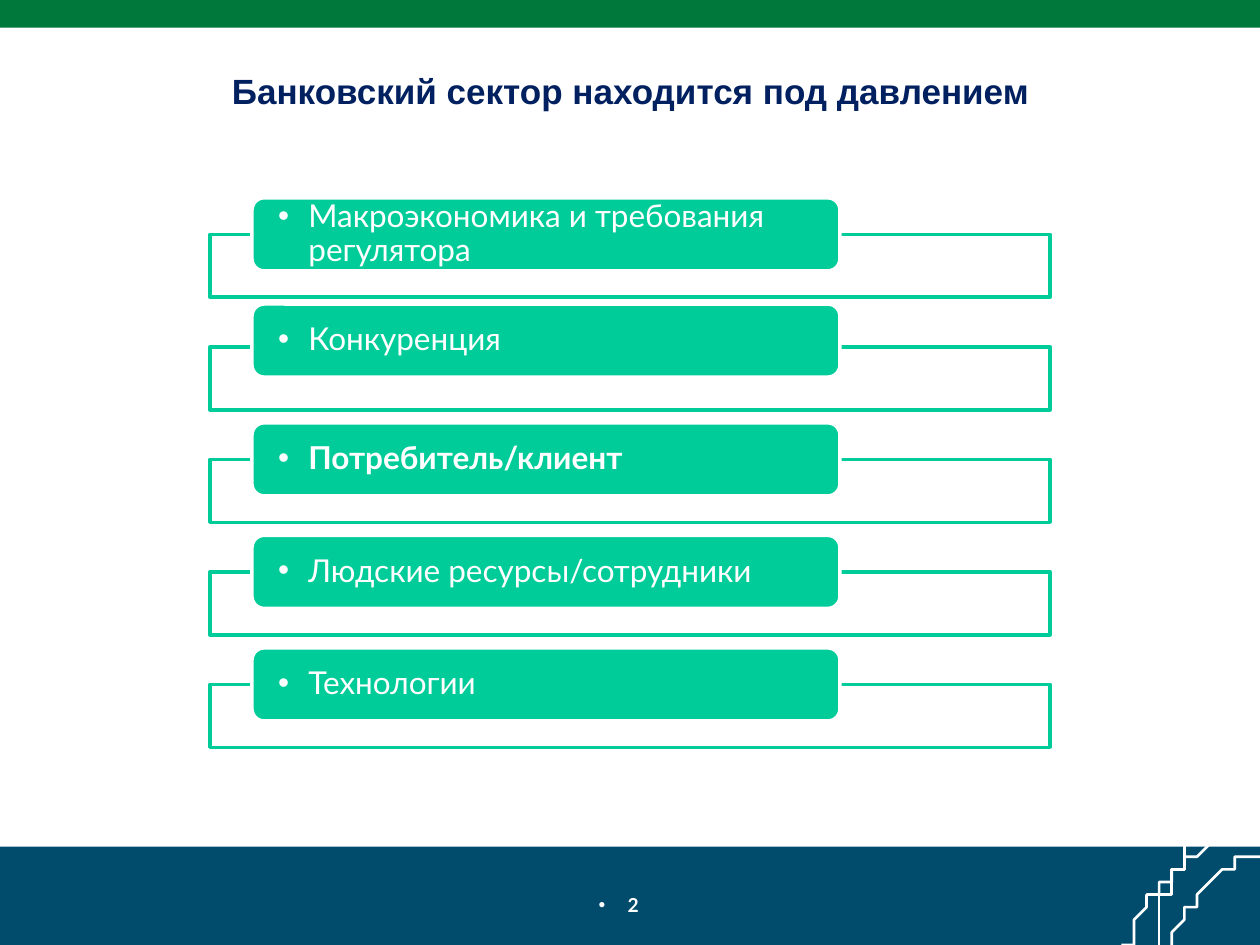
from dataclasses import dataclass

from lxml.etree import SubElement
from pptx import Presentation
from pptx.dml.color import RGBColor
from pptx.enum.shapes import MSO_SHAPE as Preset
from pptx.enum.text import MSO_ANCHOR as Anchor, PP_ALIGN as Align
from pptx.oxml.ns import qn
from pptx.shapes.autoshape import Shape
from pptx.slide import Slide
from pptx.text.text import _Paragraph as Paragraph
from pptx.util import Inches, Pt

COLORS = {
    "white": "FFFFFF",
    "footer": "014C6D",
    "header": "00783C",
    "title": "002060",
    "pressure": "00CC99",
}
COLUMNS, ROWS = 100, 75
UNIT = Inches(10) // COLUMNS
FRAME_TOP, FRAME_PITCH = 18.6, 8.93
CURVE_STEPS = 24

Point = tuple[float, float]


@dataclass(frozen=True)
class Area:
    column: float
    row: float
    columns: float
    rows: float

    def emu(self) -> list[int]:
        return [round(n * UNIT) for n in (self.column, self.row, self.columns, self.rows)]


@dataclass(frozen=True)
class Pressure:
    label: str
    bold: bool = False
    lift: float = 2.9


@dataclass(frozen=True)
class Arc:
    start: Point
    control_1: Point
    control_2: Point
    end: Point

    def points(self) -> list[Point]:
        def at(t: float, axis: int) -> float:
            u = 1 - t
            return (u**3 * self.start[axis] + 3 * u * u * t * self.control_1[axis]
                    + 3 * u * t * t * self.control_2[axis] + t**3 * self.end[axis])

        steps = [i / CURVE_STEPS for i in range(CURVE_STEPS + 1)]
        return [(at(t, 0), at(t, 1)) for t in steps]


PRESSURES = [
    Pressure("Макроэкономика и требования регулятора"),
    Pressure("Конкуренция", lift=3.4),
    Pressure("Потребитель/клиент", bold=True),
    Pressure("Людские ресурсы/сотрудники"),
    Pressure("Технологии"),
]
FOOTER_ARCS = [
    [Arc((96.1, 67.2), (93.1, 68.6), (90.7, 71.4), (89.4, 75))],
    [
        Arc((100, 67.7), (96.8, 68.5), (94.2, 71.3), (92.8, 75)),
        Arc((94.4, 67.2), (93, 69.4), (91.9, 72.1), (91.5, 74.9)),
    ],
]


def color(key: str) -> RGBColor:
    return RGBColor.from_string(COLORS[key])


def add_block(slide: Slide, area: Area, fill: str, line: str | None = None,
              preset: Preset = Preset.RECTANGLE) -> Shape:
    block = slide.shapes.add_shape(preset, *area.emu())
    block.shadow.inherit = False
    block.fill.solid()
    block.fill.fore_color.rgb = color(fill)
    if line:
        block.line.color.rgb = color(line)
        block.line.width = Pt(2)
    else:
        block.line.fill.background()
    return block


def set_bullet(paragraph: Paragraph, indent: float) -> None:
    properties = paragraph._p.get_or_add_pPr()
    properties.set("marL", str(Inches(indent)))
    properties.set("indent", str(-Inches(indent)))
    SubElement(properties, qn("a:buFont"), typeface="Arial")
    SubElement(properties, qn("a:buChar"), char="•")


def set_font(paragraph: Paragraph, name: str, size: int, key: str, bold: bool) -> None:
    font = paragraph.font
    font.name, font.size, font.bold = name, Pt(size), bold
    font.color.rgb = color(key)


def add_caption(slide: Slide, area: Area, text: str) -> Shape:
    caption = slide.shapes.add_textbox(*area.emu())
    caption.text_frame.word_wrap = True
    paragraph = caption.text_frame.paragraphs[0]
    paragraph.text = text
    paragraph.alignment = Align.CENTER
    return caption


def add_pressure(slide: Slide, pressure: Pressure, row: float) -> None:
    frame = add_block(slide, Area(16.67, row, 66.67, 5), "white", "pressure")
    frame_color = frame.fill._xPr.find(qn("a:solidFill")).find(qn("a:srgbClr"))
    SubElement(frame_color, qn("a:alpha"), val="90000")

    pill = add_block(slide, Area(20, row - pressure.lift, 46.67, 5.8),
                     "pressure", "white", Preset.ROUNDED_RECTANGLE)
    label = pill.text_frame
    label.word_wrap = True
    label.vertical_anchor = Anchor.MIDDLE
    label.margin_left = label.margin_right = Inches(0.18)
    label.margin_top = label.margin_bottom = 0
    paragraph = label.paragraphs[0]
    paragraph.text = pressure.label
    paragraph.alignment = Align.LEFT
    paragraph.line_spacing = 0.9
    set_bullet(paragraph, 0.24)
    set_font(paragraph, "Lato", 18, "white", pressure.bold)


def add_arcs(slide: Slide, arcs: list[Arc]) -> None:
    first, *others = [arc.points() for arc in arcs]
    builder = slide.shapes.build_freeform(*first[0], scale=UNIT)
    builder.add_line_segments(first[1:], close=False)
    for points in others:
        builder.move_to(*points[0])
        builder.add_line_segments(points[1:], close=False)
    outline = builder.convert_to_shape()
    outline.shadow.inherit = False
    outline.fill.background()
    outline.line.color.rgb = color("white")
    outline.line.width = Pt(1.5)


def main() -> None:
    deck = Presentation()
    deck.slide_width, deck.slide_height = COLUMNS * UNIT, ROWS * UNIT
    slide = deck.slides.add_slide(deck.slide_layouts[6])

    add_block(slide, Area(0, 67.2, COLUMNS, 7.8), "footer")
    for arcs in FOOTER_ARCS:
        add_arcs(slide, arcs)
    add_block(slide, Area(0, 0, COLUMNS, 2.2), "header")

    number = add_caption(slide, Area(39.7, 70.4, 20.6, 3.1), "2").text_frame
    number.margin_left, number.margin_right = 0, Inches(0.18)
    set_bullet(number.paragraphs[0], 0.23)
    set_font(number.paragraphs[0], "Lato", 11, "white", True)

    title = add_caption(slide, Area(7.3, 5, 85.5, 4.4),
                        "Банковский сектор находится под давлением").text_frame
    set_font(title.paragraphs[0], "Arial", 20, "title", True)

    for index, pressure in enumerate(PRESSURES):
        add_pressure(slide, pressure, FRAME_TOP + index * FRAME_PITCH)

    deck.save("out.pptx")


if __name__ == "__main__":
    main()
